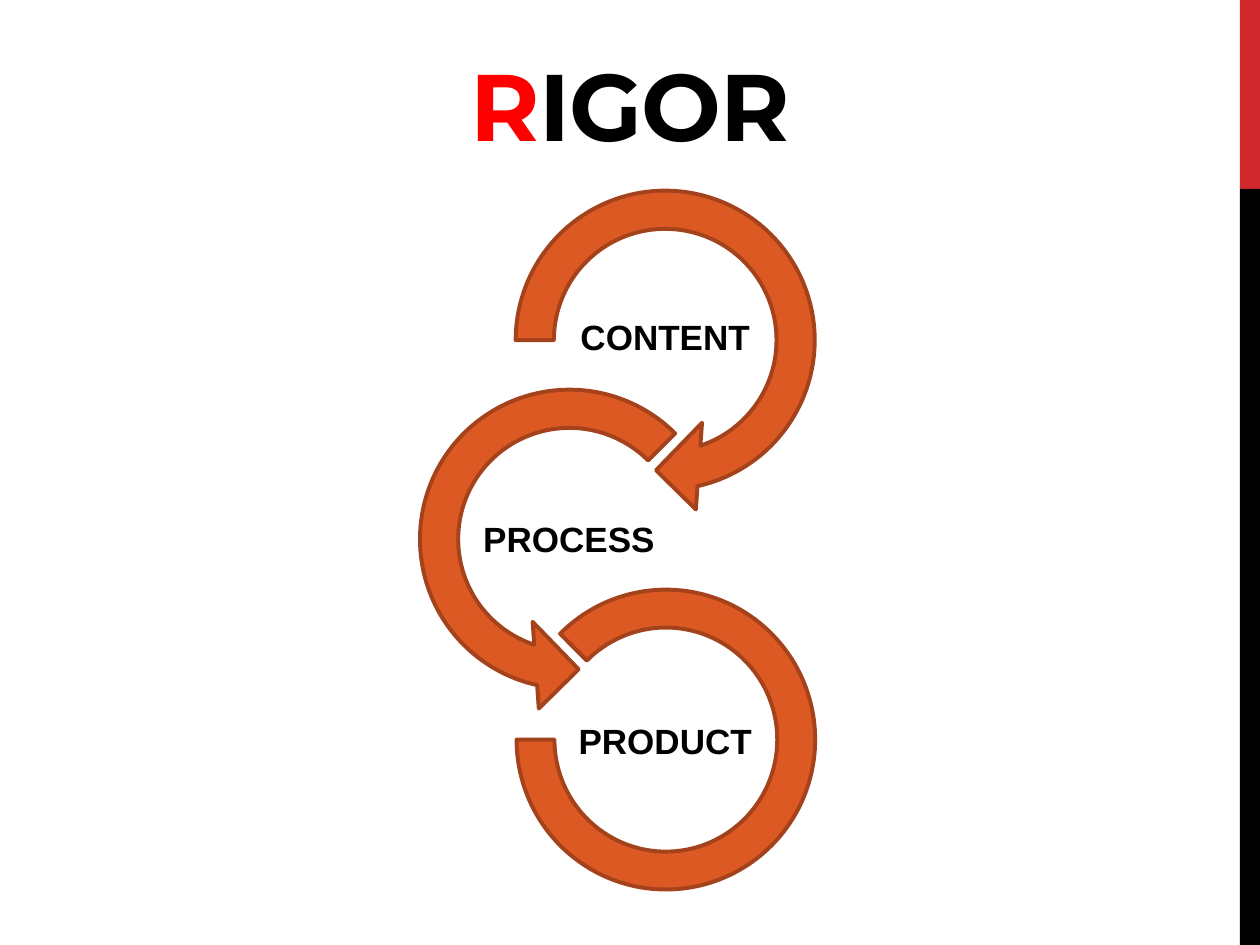
import pptx
import pptx.dml.color
import pptx.enum.shapes
import pptx.enum.text
import pptx.util

Inches = pptx.util.Inches
Pt = pptx.util.Pt
RGBColor = pptx.dml.color.RGBColor
MSO_SHAPE = pptx.enum.shapes.MSO_SHAPE
MSO_ANCHOR = pptx.enum.text.MSO_ANCHOR

RED = RGBColor(0xD1, 0x28, 0x2E)
BRIGHT_RED = RGBColor(0xFF, 0x00, 0x00)
BLACK = RGBColor(0x00, 0x00, 0x00)
ORANGE = RGBColor(0xDC, 0x59, 0x24)
RUST = RGBColor(0xA3, 0x42, 0x1B)


def add_run(paragraph, text, *, font, size, color=BLACK, spacing=None):
    run = paragraph.add_run()
    run.text = text
    run.font.name = font
    run.font.size = Pt(size)
    run.font.bold = True
    run.font.color.rgb = color
    if spacing is not None:
        run.font._element.set("spc", str(round(spacing * 100)))


def add_text_box(slide, box, runs, *, anchor, inset=None, line_spacing=None, **font_format):
    frame = slide.shapes.add_textbox(*map(Inches, box)).text_frame
    frame.word_wrap = True
    frame.vertical_anchor = anchor
    if inset is not None:
        frame.margin_left = frame.margin_right = Inches(inset)
        frame.margin_top = frame.margin_bottom = Inches(inset)
    paragraph = frame.paragraphs[0]
    paragraph.alignment = pptx.enum.text.PP_ALIGN.CENTER
    if line_spacing is not None:
        paragraph.line_spacing = line_spacing
    for text, color in runs:
        add_run(paragraph, text, color=color, **font_format)


def add_filled_shape(slide, kind, box, fill, line=None, adjustments=()):
    shape = slide.shapes.add_shape(kind, *map(Inches, box))
    shape.shadow.inherit = False
    shape.fill.solid()
    shape.fill.fore_color.rgb = fill
    if line is None:
        shape.line.fill.background()
    else:
        shape.line.color.rgb = line
        shape.line.width = Pt(2.25)
    for index, value in enumerate(adjustments):
        shape.adjustments[index] = value


def add_side_bar(slide, box):
    left, top, width, height = box
    accent = height * 0.2
    add_filled_shape(slide, MSO_SHAPE.RECTANGLE, (left, top, width, accent), RED)
    add_filled_shape(
        slide, MSO_SHAPE.RECTANGLE, (left, top + accent, width, height - accent), BLACK
    )


def add_title(slide, box):
    add_text_box(
        slide, box, [("R", BRIGHT_RED), ("IGOR", BLACK)],
        anchor=MSO_ANCHOR.BOTTOM, font="Montserrat", size=54, spacing=-0.6,
    )


def add_process(slide, box):
    left, top, width, height = box
    ring = 2.76
    steps = [
        ("CONTENT", MSO_SHAPE.CIRCULAR_ARROW, (width - ring, 0, ring, ring),
         (0.11, 11.423, 45, 108, 0.125), (1.11, 0.93, 2.06, 0.89)),
        ("PROCESS", MSO_SHAPE.LEFT_CIRCULAR_ARROW, (0, 1.58, ring, ring),
         (0.11, 11.423, 63, 189, 0.125), (0.48, 2.59, 1.79, 0.77)),
        ("PRODUCT", MSO_SHAPE.BLOCK_ARC, (0.96, height - 2.38, 2.37, 2.38),
         (135, 108, 0.127), (1.16, 4.19, 1.96, 0.77)),
    ]
    for label, kind, ring_box, adjustments, label_box in steps:
        ring_box, label_box = (
            (left + x, top + y, w, h) for x, y, w, h in (ring_box, label_box)
        )
        add_filled_shape(slide, kind, ring_box, ORANGE, RUST, adjustments)
        add_text_box(
            slide, label_box, [(label, BLACK)], anchor=MSO_ANCHOR.MIDDLE,
            inset=0.01, line_spacing=0.9, font="Arial", size=20,
        )


def main():
    presentation = pptx.Presentation()
    presentation.slide_width = Inches(10)
    presentation.slide_height = Inches(7.5)
    slide = presentation.slides.add_slide(presentation.slide_layouts[6])
    add_side_bar(slide, (9.84, 0, 0.16, 7.5))
    add_title(slide, (0.6, 0.12, 8.8, 1.2))
    add_process(slide, (3.14, 1.32, 3.52, 5.74))
    presentation.save("out.pptx")


if __name__ == "__main__":
    main()
